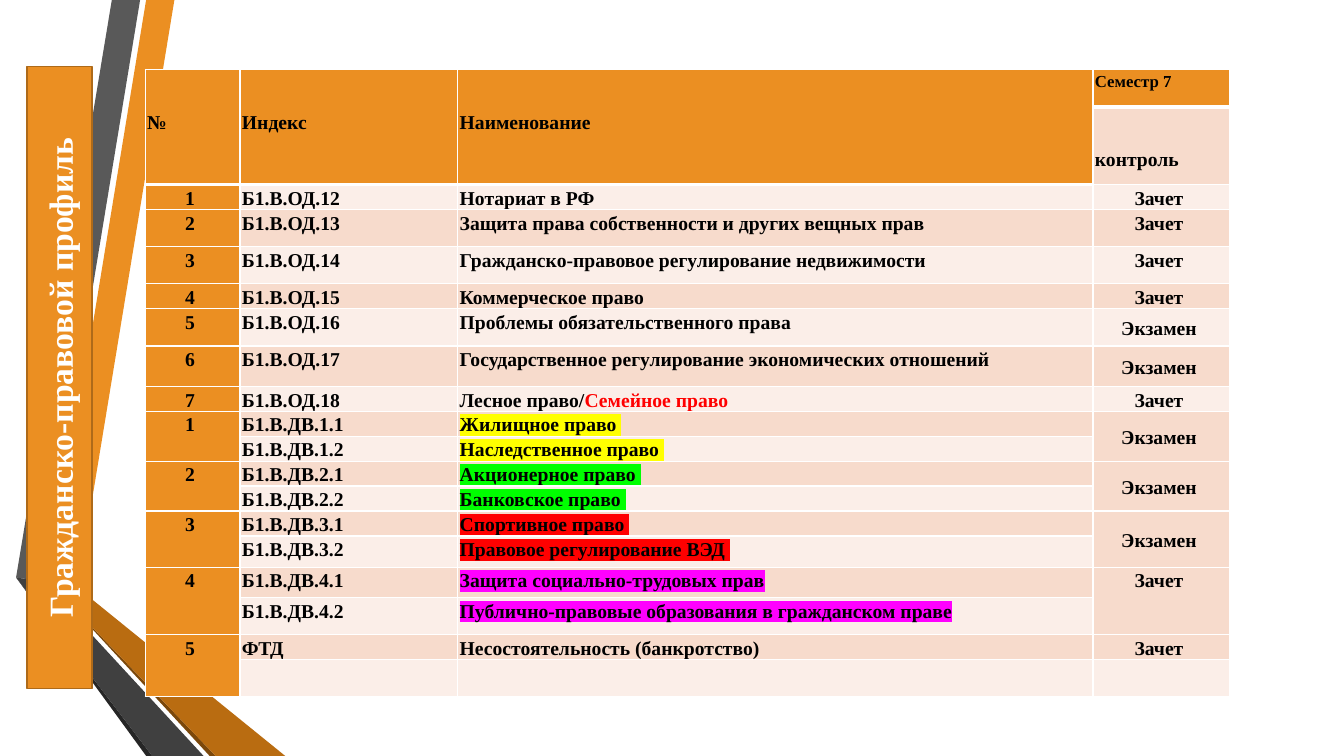
from dataclasses import dataclass

from lxml.etree import SubElement
from pptx import Presentation
from pptx.dml.color import RGBColor
from pptx.enum.shapes import MSO_SHAPE
from pptx.enum.text import MSO_ANCHOR, PP_ALIGN
from pptx.oxml.ns import qn
from pptx.util import Inches, Pt


@dataclass(frozen=True)
class Theme:
    font: str = "Times New Roman"
    title: int = 24
    body: int = 14
    small: int = 12
    accent: str = "EB8F22"
    outline: str = "AE6A19"
    band_dark: str = "F7DBCC"
    band_light: str = "FBEEE8"
    black: str = "000000"
    white: str = "FFFFFF"
    red: str = "FF0000"
    yellow: str = "FFFF00"
    green: str = "00FF00"
    magenta: str = "FF00FF"


T = Theme()
WIDTH, HEIGHT = Inches(13.33), Inches(7.5)

# Fill and corner points in inches, from back to front
RIBBONS = [
    (T.accent, [(0.5, 5.78), (0.77, 5.83), (1.73, 0), (1.45, 0)]),
    ("595959", [(1.39, 0), (1.11, 0), (0.16, 5.73), (0.44, 5.77)]),
    ("262626", [(0.16, 5.73), (1.45, 7.5), (1.51, 7.5)]),
    ("7B480B", [(0.5, 5.79), (2.08, 7.5), (2.14, 7.5)]),
    ("B96C11", [(0.5, 5.79), (2.14, 7.5), (2.83, 7.5), (0.77, 5.83), (0.5, 5.78)]),
    ("404040", [(2.02, 7.5), (0.48, 5.83), (0.43, 5.78), (0.44, 5.77),
                (0.16, 5.73), (1.51, 7.5)]),
]

COLUMNS = [0.94, 2.16, 6.3, 1.36]
HEADER_ROWS = [0.37, 0.77]
HEADINGS = ["№", "Индекс", "Наименование"]

# Row height, number, index, name, highlight, form of control
COURSES = [
    (0.19, "1 ", "Б1.В.ОД.12", "Нотариат в РФ", None, "Зачет "),
    (0.37, "2 ", "Б1.В.ОД.13", "Защита права собственности и других вещных прав", None, "Зачет "),
    (0.37, "3 ", "Б1.В.ОД.14", "Гражданско-правовое регулирование недвижимости", None, "Зачет "),
    (0.2, "4 ", "Б1.В.ОД.15", "Коммерческое право", None, "Зачет "),
    (0.37, "5 ", "Б1.В.ОД.16", "Проблемы обязательственного права", None, "Экзамен "),
    (0.4, "6 ", "Б1.В.ОД.17", "Государственное регулирование экономических отношений", None,
     "Экзамен "),
    (0.19, "7 ", "Б1.В.ОД.18", "Лесное право/|Семейное право", None, "Зачет "),
    (0.2, "1 ", "Б1.В.ДВ.1.1", "Жилищное право ", T.yellow, "Экзамен "),
    (0.2, "", "Б1.В.ДВ.1.2", "Наследственное право ", T.yellow, ""),
    (0.2, "2 ", "Б1.В.ДВ.2.1", "Акционерное право ", T.green, "Экзамен "),
    (0.2, "", "Б1.В.ДВ.2.2", "Банковское право ", T.green, ""),
    (0.2, "3 ", "Б1.В.ДВ.3.1", "Спортивное право ", T.red, "Экзамен "),
    (0.31, "", "Б1.В.ДВ.3.2", "Правовое регулирование ВЭД ", T.red, ""),
    (0.3, "4 ", "Б1.В.ДВ.4.1", "Защита социально-трудовых прав", T.magenta, "Зачет "),
    (0.37, "", "Б1.В.ДВ.4.2", "Публично-правовые образования в гражданском праве", T.magenta, ""),
    (0.2, "5 ", "ФТД", "Несостоятельность (банкротство)", None, "Зачет "),
    (0.37, "", "", "", None, ""),
]


def rgb(value):
    return RGBColor.from_string(value)


def set_all(target, values):
    for name, value in values.items():
        setattr(target, name, value)


def paint(target, color):
    target.fill.solid()
    target.fill.fore_color.rgb = rgb(color)


def add_run(p, text, size=T.body, color=T.black, highlight=None):
    r = p.add_run()
    r.text = text
    set_all(r.font, {"name": T.font, "size": Pt(size), "bold": True})
    r.font.color.rgb = rgb(color)
    if highlight:
        rPr = r.font._element if hasattr(r.font, "_element") else r._r.get_or_add_rPr()
        mark = SubElement(rPr, qn("a:highlight"))
        SubElement(mark, qn("a:srgbClr")).set("val", highlight)
        rPr.find(qn("a:solidFill")).addnext(mark)


def add_ribbons(s):
    for color, points in RIBBONS:
        corners = [(Inches(x), Inches(y)) for x, y in points]
        builder = s.shapes.build_freeform(*corners[0], scale=1.0)
        builder.add_line_segments(corners[1:], close=True)
        sp = builder.convert_to_shape()
        sp.shadow.inherit = False
        paint(sp, color)
        sp.line.fill.background()


def add_side_title(s, box, text):
    sp = s.shapes.add_shape(MSO_SHAPE.RECTANGLE, *box)
    sp.shadow.inherit = False
    paint(sp, T.accent)
    sp.line.color.rgb = rgb(T.outline)
    sp.line.width = Pt(1.25)
    tf = sp.text_frame
    set_all(tf, {"word_wrap": True, "vertical_anchor": MSO_ANCHOR.MIDDLE})
    tf._txBody.bodyPr.set("vert", "vert270")
    p = tf.paragraphs[0]
    p.alignment = PP_ALIGN.CENTER
    add_run(p, text, T.title, T.white)


def format_cell(cell, row, col):
    """Set the margins, white rules and band colour that follow from the position."""
    set_all(cell, {"margin_left": Inches(0.02), "margin_right": Inches(0.02),
                   "margin_top": 0, "margin_bottom": 0})
    header_end = 0 if col == 3 else 1
    widths = {"lnL": 1, "lnR": 1, "lnT": 3 if row == header_end + 1 else 1,
              "lnB": 3 if row == header_end else 1}
    for side, width in widths.items():
        ln = SubElement(cell._tc.get_or_add_tcPr(), qn("a:" + side), w=str(Pt(width)))
        fill = SubElement(ln, qn("a:solidFill"))
        SubElement(fill, qn("a:srgbClr")).set("val", T.white)
    band = T.band_dark if row % 2 else T.band_light
    paint(cell, T.accent if row == 0 or col == 0 else band)


def write_cell(cell, text, align=PP_ALIGN.LEFT, size=T.body, highlight=None):
    """Write text; the part after a bar is red."""
    p = cell.text_frame.paragraphs[0]
    set_all(p, {"alignment": align, "line_spacing": 1.15, "space_after": Pt(10)})
    for part, color in zip(text.split("|"), (T.black, T.red)):
        add_run(p, part, size, color, highlight)


def add_course_table(s, box):
    heights = HEADER_ROWS + [course[0] for course in COURSES]
    left, top, width, height = box
    table = s.shapes.add_table(len(heights), len(COLUMNS), left, top, width, height).table
    set_all(table, {"first_row": False, "horz_banding": False})
    for column, share in zip(table.columns, COLUMNS):
        column.width = int(width * share / sum(COLUMNS))
    for row, share in zip(table.rows, heights):
        row.height = int(height * share / sum(heights))
    for i in range(len(heights)):
        for j in range(len(COLUMNS)):
            format_cell(table.cell(i, j), i, j)

    for j, heading in enumerate(HEADINGS):
        table.cell(0, j).merge(table.cell(1, j))
        write_cell(table.cell(0, j), heading)
        table.cell(0, j).margin_top = Inches(0.39)
    write_cell(table.cell(0, 3), "Семестр 7", size=T.small)
    write_cell(table.cell(1, 3), "контроль")
    table.cell(1, 3).margin_top = Inches(0.39)

    for i, (_, number, index, name, highlight, control) in enumerate(COURSES, len(HEADER_ROWS)):
        if not number:
            for j in (0, 3) if index else (0,):
                table.cell(i - 1, j).merge(table.cell(i, j))
        for j, text in enumerate((number, index, name, control)):
            if text:
                write_cell(table.cell(i, j), text,
                           align=PP_ALIGN.CENTER if j in (0, 3) else PP_ALIGN.LEFT,
                           highlight=highlight if j == 2 else None)
        if control.startswith("Экзамен"):
            table.cell(i, 3).vertical_anchor = MSO_ANCHOR.MIDDLE


def main():
    prs = Presentation()
    set_all(prs, {"slide_width": WIDTH, "slide_height": HEIGHT})
    s = prs.slides.add_slide(prs.slide_layouts[6])
    add_ribbons(s)
    add_side_title(s, (Inches(0.27), Inches(0.66), Inches(0.64), Inches(6.17)),
                   "Гражданско-правовой профиль")
    add_course_table(s, (Inches(1.44), Inches(0.69), Inches(10.76), Inches(5.78)))
    prs.save("out.pptx")


if __name__ == "__main__":
    main()
